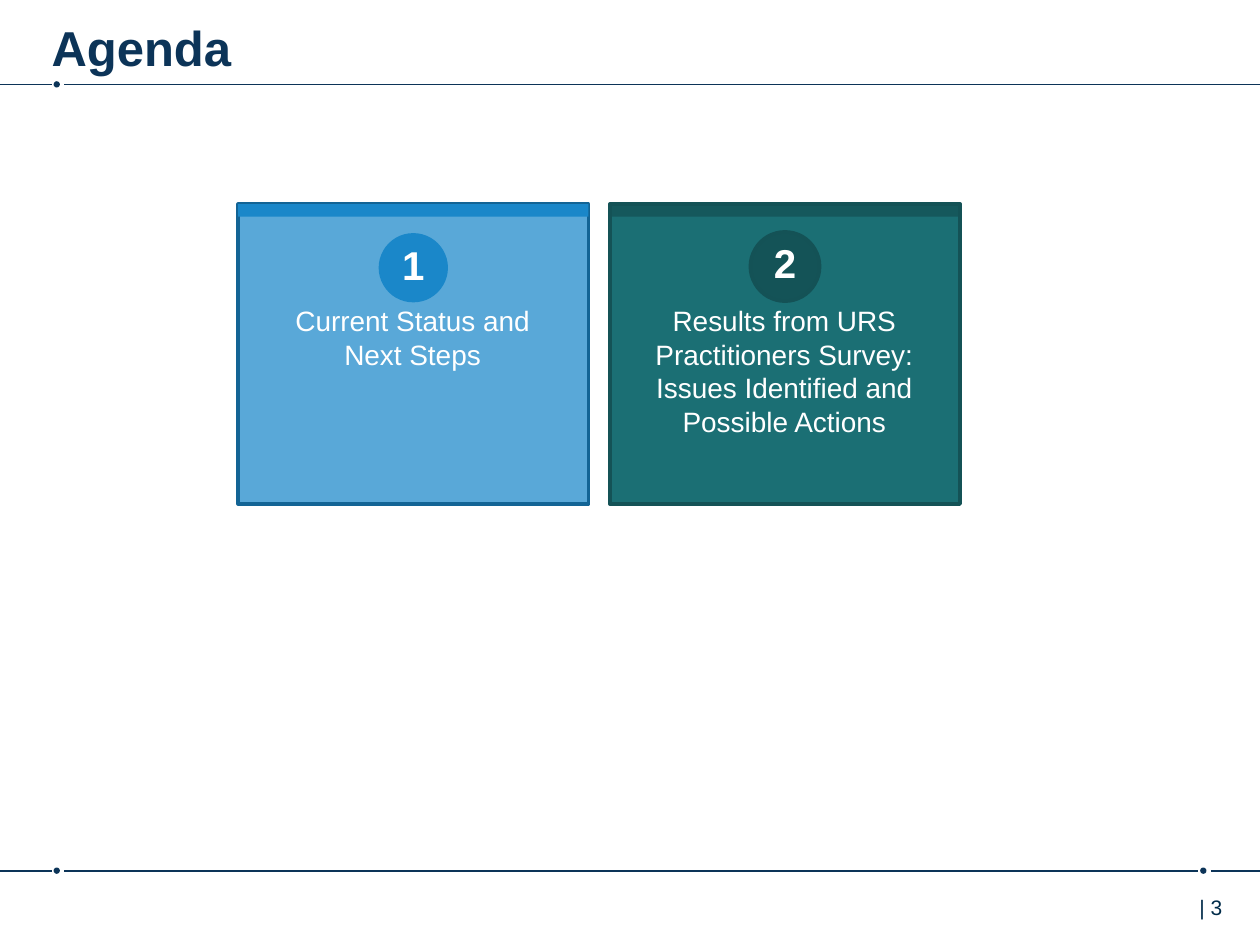
"""Build the agenda slide with two numbered topic cards."""
from dataclasses import dataclass
from typing import Optional

from lxml.etree import SubElement
from pptx import Presentation
from pptx.dml.color import RGBColor
from pptx.enum.shapes import MSO_CONNECTOR as Connector
from pptx.enum.shapes import MSO_SHAPE as Shape
from pptx.enum.text import MSO_ANCHOR as Anchor
from pptx.enum.text import PP_ALIGN as Align
from pptx.oxml.ns import qn
from pptx.util import Inches, Pt

NAVY, WHITE = "0C3458", "FFFFFF"
CARD_TOP, CARD_WIDTH, CARD_HEIGHT = 1.62, 2.78, 2.38
BADGE_SIZE, DOT_SIZE = 0.55, 0.05


@dataclass
class Card:
    number: str
    topic: str
    left: float
    body: str
    body_alpha: int
    accent: str
    accent_alpha: int
    border: str
    badge_border: Optional[str]
    badge_top: float
    number_top: float
    topic_height: float


CARDS = [
    Card("1", "Current Status and Next Steps", 1.89, "1A87C9", 72, "1A87C9", 100,
         "136495", None, 1.85, 1.86, 0.64),
    Card("2", "Results from URS Practitioners Survey: Issues Identified and Possible Actions",
         4.84, "1B6F74", 100, "145357", 80, "145256", "145256", 1.84, 1.84, 1.18),
]


def rgb(value: str) -> RGBColor:
    return RGBColor.from_string(value)


def write(frame, text: str, *, size: float, color: str = WHITE, bold: bool = False,
          align: Align = Align.LEFT, left: float = 0.1, right: float = 0.1,
          top: float = 0.05) -> None:
    frame.word_wrap = True
    frame.vertical_anchor = Anchor.TOP
    frame.margin_left, frame.margin_right = Inches(left), Inches(right)
    frame.margin_top = Inches(top)
    paragraph = frame.paragraphs[0]
    paragraph.alignment = align
    run = paragraph.add_run()
    run.text = text
    run.font.name, run.font.size, run.font.bold = "Arial", Pt(size), bold
    run.font.color.rgb = rgb(color)


def add_label(slide, box: tuple, text: str, **style) -> None:
    label = slide.shapes.add_textbox(*map(Inches, box))
    write(label.text_frame, text, **style)


def add_block(slide, kind: Shape, box: tuple, fill: str, alpha: int = 100,
              border: Optional[str] = None) -> None:
    block = slide.shapes.add_shape(kind, *map(Inches, box))
    block.shadow.inherit = False
    block.fill.solid()
    block.fill.fore_color.rgb = rgb(fill)
    if alpha < 100:
        tint = block.fill._xPr.find(f"{qn('a:solidFill')}/{qn('a:srgbClr')}")
        SubElement(tint, qn("a:alpha"), val=str(alpha * 1000))
    if border:
        block.line.color.rgb = rgb(border)
        block.line.width = Pt(2)
    else:
        block.line.fill.background()


def add_rule(slide, y: float, dots: list[float]) -> None:
    starts = [0] + [dot + 0.06 for dot in dots]
    ends = [dot - 0.04 for dot in dots] + [10]
    for start, end in zip(starts, ends):
        segment = slide.shapes.add_connector(
            Connector.STRAIGHT, Inches(start), Inches(y), Inches(end), Inches(y))
        segment.line.color.rgb = rgb(NAVY)
        segment.line.width = Pt(1)
        SubElement(segment._element.spPr, qn("a:effectLst"))
    for dot in dots:
        add_block(slide, Shape.OVAL,
                  (dot - DOT_SIZE / 2, y - DOT_SIZE / 2, DOT_SIZE, DOT_SIZE), NAVY)


def add_card(slide, card: Card) -> None:
    add_block(slide, Shape.RECTANGLE, (card.left, CARD_TOP, CARD_WIDTH, CARD_HEIGHT),
              card.body, card.body_alpha, card.border)
    add_block(slide, Shape.RECTANGLE, (card.left, CARD_TOP, CARD_WIDTH, 0.1),
              card.accent, card.accent_alpha)
    badge_left = card.left + (CARD_WIDTH - BADGE_SIZE) / 2
    add_block(slide, Shape.OVAL, (badge_left, card.badge_top, BADGE_SIZE, BADGE_SIZE),
              card.accent, border=card.badge_border)
    add_label(slide, (card.left + 0.25, 2.36, 2.27, card.topic_height), card.topic,
              size=16, align=Align.CENTER)
    add_label(slide, (card.left, card.number_top, CARD_WIDTH, 0.49), card.number,
              size=23, bold=True, align=Align.CENTER)


def main() -> None:
    deck = Presentation()
    deck.slide_width, deck.slide_height = Inches(10), Inches(7.5)
    slide = deck.slides.add_slide(deck.slide_layouts[5])
    title = slide.shapes.title
    title.left, title.top = Inches(0.41), Inches(0.05)
    title.width, title.height = Inches(8.76), Inches(0.49)
    write(title.text_frame, "Agenda", size=28, color=NAVY, bold=True,
          left=0, right=0, top=0.09)
    add_rule(slide, 0.67, [0.45])
    add_rule(slide, 6.91, [0.45, 9.55])
    add_label(slide, (9.29, 7.05, 0.87, 0.4), "| 3", size=12, color="002B49", left=0.23)
    for card in CARDS:
        add_card(slide, card)
    deck.save("out.pptx")


if __name__ == "__main__":
    main()
